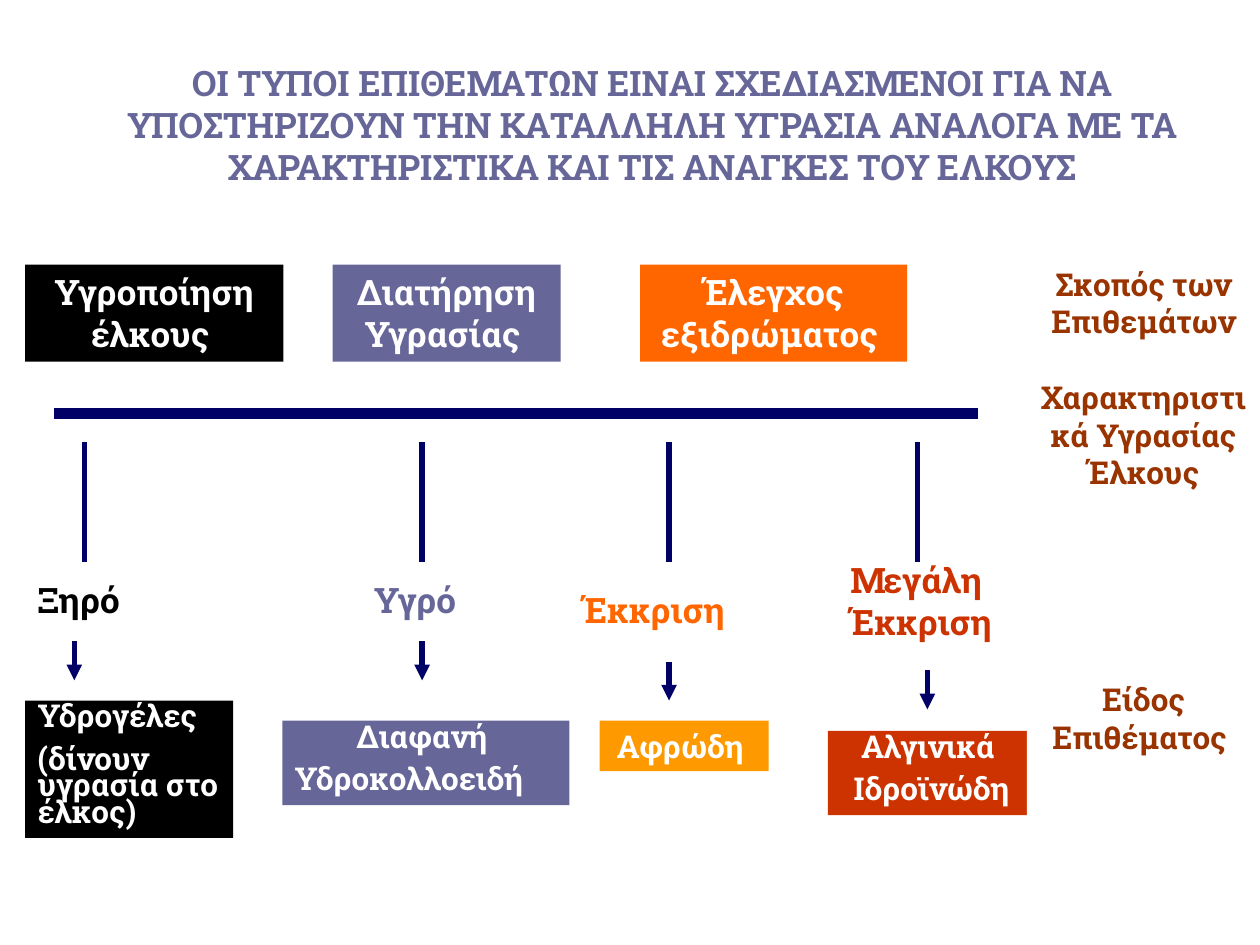
from pptx import Presentation
from pptx.dml.color import RGBColor
from pptx.enum.shapes import MSO_CONNECTOR, MSO_SHAPE
from pptx.enum.text import MSO_ANCHOR, PP_ALIGN
from pptx.oxml.ns import qn
from pptx.util import Inches, Pt
from lxml import etree

LEFT, CENTER = PP_ALIGN.LEFT, PP_ALIGN.CENTER
TOP, BOTTOM = MSO_ANCHOR.TOP, MSO_ANCHOR.BOTTOM
RECTANGLE, STRAIGHT = MSO_SHAPE.RECTANGLE, MSO_CONNECTOR.STRAIGHT

BLACK = RGBColor(0x00, 0x00, 0x00)
WHITE = RGBColor(0xFF, 0xFF, 0xFF)
VIOLET = RGBColor(0x66, 0x66, 0x99)
ORANGE = RGBColor(0xFF, 0x66, 0x00)
AMBER = RGBColor(0xFF, 0x99, 0x00)
RED = RGBColor(0xCC, 0x33, 0x00)
BROWN = RGBColor(0x99, 0x33, 0x00)
NAVY = RGBColor(0x00, 0x00, 0x66)
FONT = "Roboto Slab"

# Content
TITLE = ("ΟΙ ΤΥΠΟΙ ΕΠΙΘΕΜΑΤΩΝ ΕΙΝΑΙ ΣΧΕΔΙΑΣΜΕΝΟΙ ΓΙΑ ΝΑ ΥΠΟΣΤΗΡΙΖΟΥΝ ΤΗΝ "
         "ΚΑΤΑΛΛΗΛΗ ΥΓΡΑΣΙΑ ΑΝΑΛΟΓΑ ΜΕ ΤΑ ΧΑΡΑΚΤΗΡΙΣΤΙΚΑ ΚΑΙ ΤΙΣ ΑΝΑΓΚΕΣ ΤΟΥ ΕΛΚΟΥΣ")

# Purposes: text, left, width, fill
PURPOSES = [
    ("Υγροποίηση έλκους ", 0.2, 2.05, BLACK),
    ("Διατήρηση Υγρασίας ", 2.64, 1.81, VIOLET),
    ("Έλεγχος εξιδρώματος ", 5.08, 2.12, ORANGE),
]

# Moisture levels: text, box (left, top, width, height), colour, stem x, arrow x, arrow top
LEVELS = [
    ("Ξηρό", (0.2, 4.54, 0.94, 0.43), BLACK, 0.67, 0.59, 5.09),
    ("Υγρό", (2.87, 4.54, 0.94, 0.43), VIOLET, 3.35, 3.35, 5.09),
    ("Έκκριση", (4.53, 4.62, 1.57, 0.43), ORANGE, 5.31, 5.31, 5.25),
    ("Μεγάλη Έκκριση", (6.65, 4.38, 1.73, 0.77), RED, 7.28, 7.36, 5.32),
]

# Dressings: paragraphs, alignments, box, fill, line spacing
DRESSINGS = [
    (["Υδρογέλες", "(δίνουν υγρασία στο έλκος)"], [LEFT, LEFT],
     (0.2, 5.56, 1.65, 1.09), BLACK, 0.7),
    (["Διαφανή ", "Υδροκολλοειδή"], [CENTER, LEFT],
     (2.24, 5.72, 2.28, 0.67), VIOLET, 0.7),
    (["Αφρώδη "], [CENTER], (4.76, 5.72, 1.34, 0.4), AMBER, 1.0),
    (["Αλγινικά ", "Ιδροϊνώδη"], [CENTER, CENTER],
     (6.57, 5.8, 1.65, 0.67), RED, 0.7),
]

# Row captions and the space before each, in points
CAPTIONS = ["Σκοπός των Επιθεμάτων", "Χαρακτηριστικά Υγρασίας Έλκους", "Είδος Επιθέματος "]
CAPTION_GAPS = [0, 21.5, 108]


def write(shape, texts, size=20, color=WHITE, aligns=None, anchor=TOP,
          line_spacing=1.0, gaps=None):
    frame = shape.text_frame
    frame.word_wrap = True
    frame.vertical_anchor = anchor
    for i, text in enumerate(texts):
        paragraph = frame.paragraphs[0] if i == 0 else frame.add_paragraph()
        paragraph.alignment = aligns[i] if aligns else CENTER
        paragraph.line_spacing = line_spacing
        paragraph.space_before = Pt(gaps[i] if gaps else 9 * (i > 0))
        run = paragraph.add_run()
        run.text = text
        run.font.name = FONT
        run.font.size = Pt(size)
        run.font.bold = True
        run.font.color.rgb = color


def add_box(slide, box, fill):
    shape = slide.shapes.add_shape(RECTANGLE, *map(Inches, box))
    shape.shadow.inherit = False
    shape.fill.solid()
    shape.fill.fore_color.rgb = fill
    shape.line.fill.background()
    return shape


def add_line(slide, x1, y1, x2, y2, width=3, arrow=False):
    connector = slide.shapes.add_connector(STRAIGHT, *map(Inches, (x1, y1, x2, y2)))
    connector.line.color.rgb = NAVY
    connector.line.width = Pt(width)
    if arrow:
        etree.SubElement(connector.line._get_or_add_ln(), qn("a:tailEnd"), type="triangle")
    etree.SubElement(connector._element.spPr, qn("a:effectLst"))


def main():
    presentation = Presentation()
    presentation.slide_width, presentation.slide_height = Inches(10), Inches(7.5)
    slide = presentation.slides.add_slide(presentation.slide_layouts[5])

    # Title
    title = slide.shapes.title
    title.left, title.top, title.width, title.height = map(Inches, (0.35, 0.21, 9.65, 1.33))
    write(title, [TITLE], color=VIOLET, anchor=BOTTOM)

    # Purposes above the scale line
    for text, left, width, fill in PURPOSES:
        write(add_box(slide, (left, 2.1, width, 0.77), fill), [text])
    add_line(slide, 0.43, 3.28, 7.76, 3.28, width=6)

    # Dressings
    for texts, aligns, box, fill, spacing in DRESSINGS:
        write(add_box(slide, box, fill), texts, size=18, aligns=aligns, line_spacing=spacing)

    # Captions on the right
    panel = add_box(slide, (8.15, 1.55, 1.85, 5.28), WHITE)
    panel.text_frame.margin_top = Inches(0.55)
    write(panel, CAPTIONS, size=18, color=BROWN, gaps=CAPTION_GAPS)

    # Moisture levels with stems and arrows
    for text, box, color, stem_x, arrow_x, arrow_top in LEVELS:
        write(slide.shapes.add_textbox(*map(Inches, box)), [text], color=color, aligns=[LEFT])
        add_line(slide, stem_x, 3.51, stem_x, 4.46)
        add_line(slide, arrow_x, arrow_top, arrow_x, arrow_top + 0.31, arrow=True)

    presentation.save("out.pptx")


if __name__ == "__main__":
    main()
